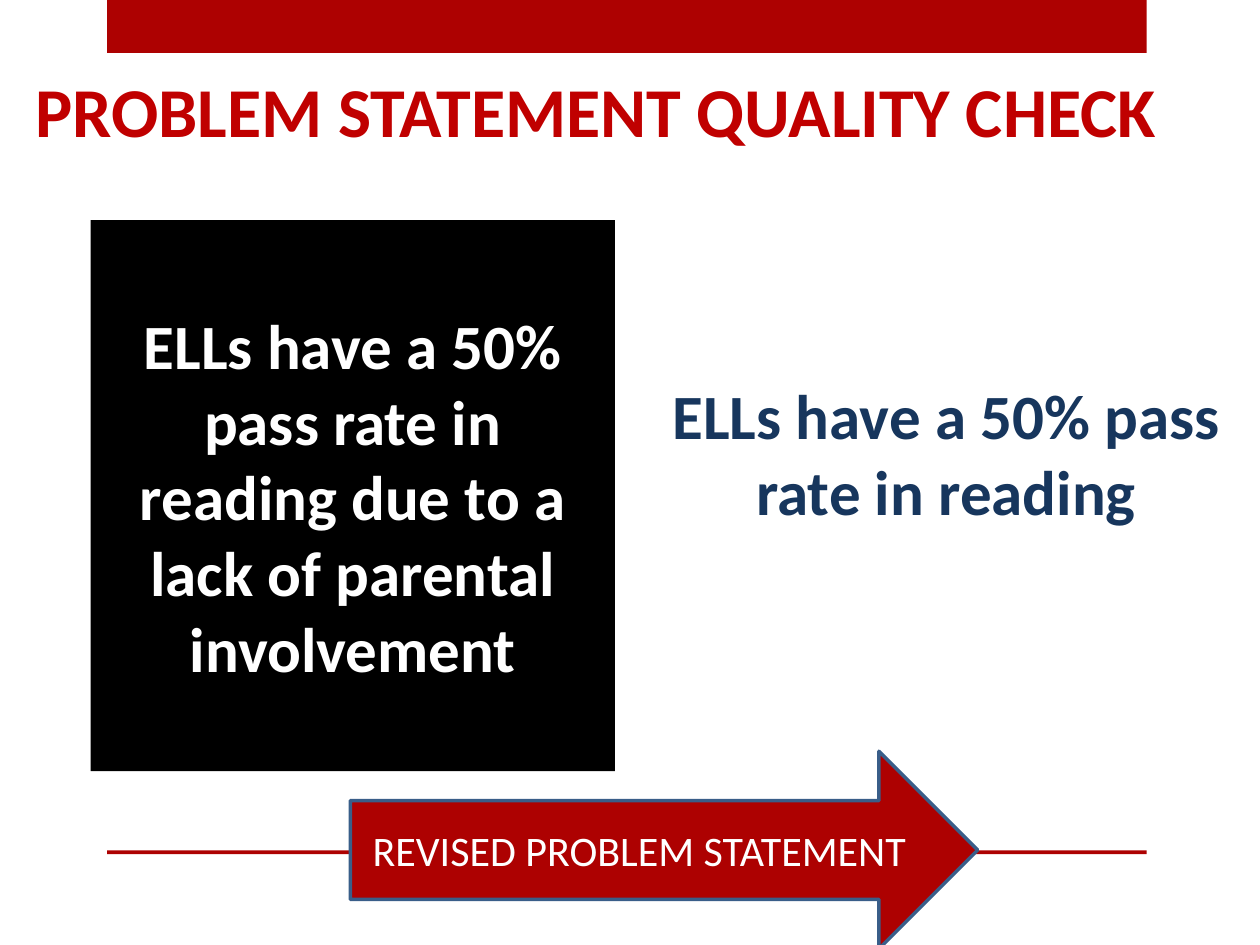
from pptx import Presentation
from pptx.dml.color import RGBColor
from pptx.enum.shapes import MSO_SHAPE
from pptx.enum.text import MSO_ANCHOR, MSO_AUTO_SIZE, PP_ALIGN
from pptx.util import Inches, Pt

BAND_RED = RGBColor(0xAD, 0x01, 0x01)
TITLE_RED = RGBColor(0xC0, 0x00, 0x00)
NAVY = RGBColor(0x17, 0x36, 0x5D)
ARROW_EDGE = RGBColor(0x39, 0x5E, 0x89)
BLACK = RGBColor(0x00, 0x00, 0x00)
WHITE = RGBColor(0xFF, 0xFF, 0xFF)

SLIDE_W, SLIDE_H = Inches(10), Inches(7.5)
FRAME_LEFT, FRAME_WIDTH = 0.085, 0.825


def region(left, top, width, height):
    """Turn shares of the slide's size into a box of lengths."""
    return (int(left * SLIDE_W), int(top * SLIDE_H),
            int(width * SLIDE_W), int(height * SLIDE_H))


def write(holder, words, size, color, bold=True,
          align=PP_ALIGN.CENTER, anchor=MSO_ANCHOR.MIDDLE, insets=(0.1, 0.05)):
    """Set one formatted run of wrapped text in a holder."""
    frame = holder.text_frame
    frame.word_wrap = True
    frame.auto_size = MSO_AUTO_SIZE.NONE
    frame.vertical_anchor = anchor
    frame.margin_left = frame.margin_right = Inches(insets[0])
    frame.margin_top = frame.margin_bottom = Inches(insets[1])
    paragraph = frame.paragraphs[0]
    paragraph.alignment = align
    run = paragraph.add_run()
    run.text = words
    run.font.name = "Calibri"
    run.font.size = Pt(size)
    run.font.bold = bold
    run.font.color.rgb = color


def add_filled(slide, preset, box, fill):
    """Add a flat, unlined preset shape in the box."""
    shape = slide.shapes.add_shape(preset, *box)
    shape.shadow.inherit = False
    shape.fill.solid()
    shape.fill.fore_color.rgb = fill
    shape.line.fill.background()
    return shape


def add_frame(slide):
    """Draw the top band and the footer rule."""
    for top, height in ((0, 0.056), (0.9, 0.004)):
        box = region(FRAME_LEFT, top, FRAME_WIDTH, height)
        add_filled(slide, MSO_SHAPE.RECTANGLE, box, BAND_RED)


def add_heading(slide, box):
    """Place the slide title in its placeholder."""
    heading = slide.shapes.title
    heading.left, heading.top, heading.width, heading.height = box
    write(heading, "PROBLEM STATEMENT QUALITY CHECK", 40, TITLE_RED,
          align=PP_ALIGN.LEFT, anchor=MSO_ANCHOR.TOP)


def add_revised_statement(slide, box):
    """Place the revised problem statement."""
    revised = slide.shapes.add_textbox(*box)
    write(revised, "ELLs have a 50% pass rate in reading", 36, NAVY,
          anchor=MSO_ANCHOR.TOP)


def add_revision_arrow(slide, box):
    """Draw the labelled arrow that points to the revised statement."""
    arrow = add_filled(slide, MSO_SHAPE.RIGHT_ARROW, box, BAND_RED)
    arrow.line.color.rgb = ARROW_EDGE
    arrow.line.width = Pt(2)
    write(arrow, "REVISED PROBLEM STATEMENT", 24, WHITE, bold=False)


def add_first_statement(slide, box):
    """Draw the black panel with the first problem statement."""
    panel = add_filled(slide, MSO_SHAPE.RECTANGLE, box, BLACK)
    write(panel, "ELLs have a 50% pass rate in reading due to a lack of "
          "parental involvement", 36, WHITE, insets=(0.07, 0.04))


def main():
    """Build the slide and save it."""
    deck = Presentation()
    deck.slide_width, deck.slide_height = SLIDE_W, SLIDE_H
    slide = deck.slides.add_slide(deck.slide_layouts.get_by_name("Title Only"))
    add_frame(slide)
    add_heading(slide, region(0.018, 0.065, 0.952, 0.16))
    add_revised_statement(slide, region(0.502, 0.392, 0.498, 0.233))
    add_revision_arrow(slide, region(0.278, 0.795, 0.498, 0.209))
    add_first_statement(slide, region(0.072, 0.233, 0.416, 0.583))
    deck.save("out.pptx")


if __name__ == "__main__":
    main()
